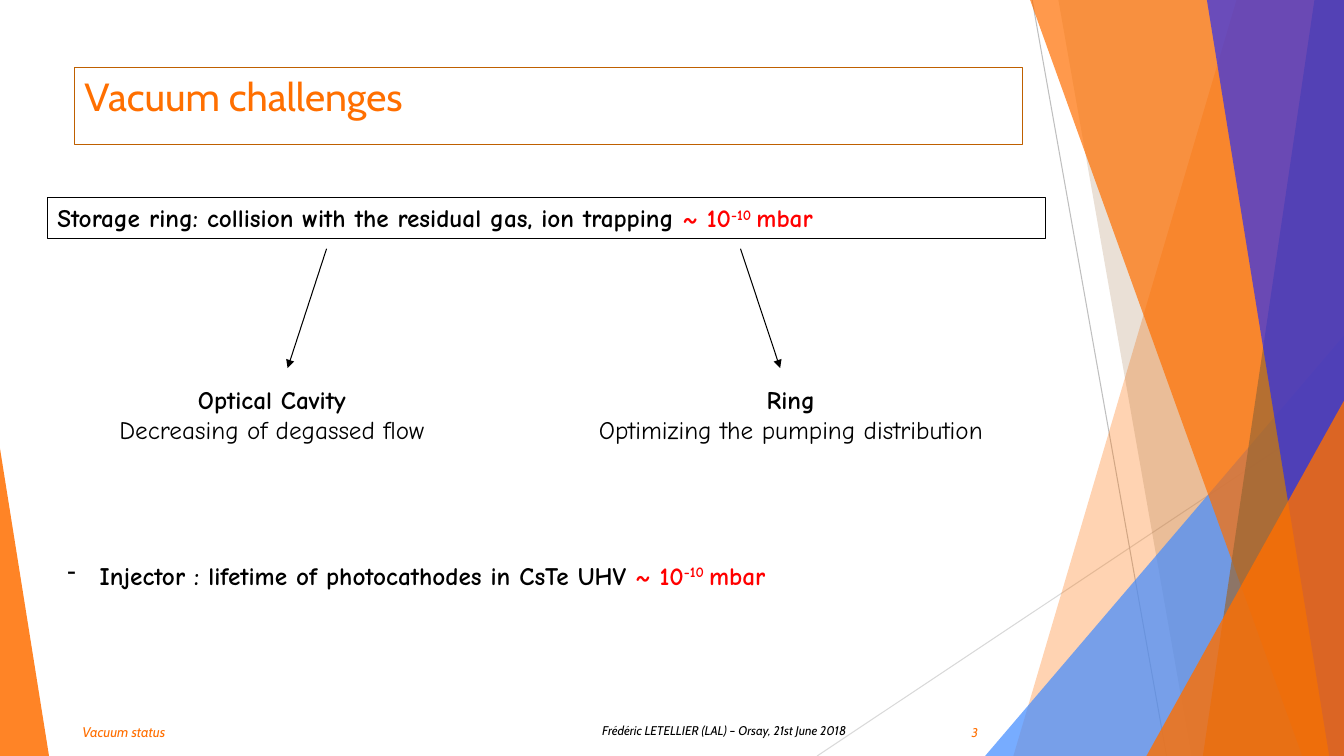
"""Build the slide on vacuum challenges in a storage ring and its injector."""
import pptx
import pptx.dml.color
import pptx.enum.shapes
import pptx.enum.text
import pptx.oxml
import pptx.oxml.ns
import pptx.util

WIDTH, HEIGHT = pptx.util.Inches(13.33), pptx.util.Inches(7.5)
ORANGE, BROWN, BLUE, INDIGO = "FF6F00", "996633", "438CFF", "1F29FD"
BLACK, RED, RUST = "000000", "FF0000", "BF6000"
LEFT, CENTER, RIGHT = (getattr(pptx.enum.text.PP_ALIGN, side) for side in ("LEFT", "CENTER", "RIGHT"))
TOP, MIDDLE = pptx.enum.text.MSO_ANCHOR.TOP, pptx.enum.text.MSO_ANCHOR.MIDDLE
TITLE = {"name": "Cabin", "size": pptx.util.Pt(28)}
BODY = {"name": "Comic Neue", "size": pptx.util.Pt(18), "bold": False}
STRONG = {**BODY, "bold": True}
SMALL = {"name": "Cabin", "size": pptx.util.Pt(9), "italic": True}
FOOTER = {**SMALL, "size": pptx.util.Pt(10)}
PRESSURE = [("~ 10", RED, 0), ("-10 ", RED, 30), ("mbar", RED, 0)]


def across(share):
    """Turn a percentage of the slide width into a length."""
    return pptx.util.Emu(round(WIDTH * share / 100))


def down(share):
    """Turn a percentage of the slide height into a length."""
    return pptx.util.Emu(round(HEIGHT * share / 100))


def paint(target, color):
    """Give a colour format the colour of a hex string."""
    target.rgb = pptx.dml.color.RGBColor.from_string(color)


def make(tag, **values):
    """Return a new drawing element with the given attributes."""
    element = pptx.oxml.parse_xml(f"<a:{tag} {pptx.oxml.ns.nsdecls('a')}/>")
    for key, value in values.items():
        element.set(key, str(value))
    return element


def add_facet(page, points, color, opacity):
    """Draw a translucent polygon through points given as slide shares."""
    start, *others = [(across(x), down(y)) for x, y in points]
    builder = page.shapes.build_freeform(*start)
    builder.add_line_segments(others, close=True)
    facet = builder.convert_to_shape()
    facet.shadow.inherit = False
    facet.line.fill.background()
    facet.fill.solid()
    paint(facet.fill.fore_color, color)
    tint = facet.fill._xPr.find(".//" + pptx.oxml.ns.qn("a:srgbClr"))
    tint.append(make("alpha", val=opacity * 1000))


def add_band(page, top, bottom, color, opacity):
    """Draw a facet from a slanted edge to the right side of the slide."""
    add_facet(page, [(top, 0), (bottom, 100), (100, 100), (100, 0)], color, opacity)


def add_line(page, start, end, color, arrow=False):
    """Draw a thin straight line, with an arrowhead at its end if asked."""
    line = page.shapes.add_connector(
        pptx.enum.shapes.MSO_CONNECTOR.STRAIGHT,
        across(start[0]), down(start[1]), across(end[0]), down(end[1]))
    line.line.width = pptx.util.Pt(0.75)
    paint(line.line.color, color)
    if arrow:
        line.line._get_or_add_ln().append(make("tailEnd", type="triangle"))
    line._element.spPr.append(make("effectLst"))


def add_text(page, place, lines, align=LEFT, anchor=TOP, border=None, bullet=None):
    """Write lines of (format, spans) in a box, framed if a border is given."""
    x, y, width, height = place
    area = across(x), down(y), across(width), down(height)
    if border:
        box = page.shapes.add_shape(pptx.enum.shapes.MSO_SHAPE.RECTANGLE, *area)
        box.shadow.inherit = False
        box.fill.background()
        box.line.width = pptx.util.Pt(0.75)
        paint(box.line.color, border)
    else:
        box = page.shapes.add_textbox(*area)
    frame = box.text_frame
    frame.word_wrap, frame.vertical_anchor = True, anchor
    for index, (style, spans) in enumerate(lines):
        para = frame.add_paragraph() if index else frame.paragraphs[0]
        para.alignment = align
        if bullet:
            indent = pptx.util.Inches(0.32)
            properties = para._p.get_or_add_pPr()
            properties.set("marL", str(indent))
            properties.set("indent", str(-indent))
            properties.append(make("buChar", char=bullet))
        for words, color, raised in spans:
            span = para.add_run()
            span.text = words
            for key, value in style.items():
                setattr(span.font, key, value)
            paint(span.font.color, color)
            if raised:
                span._r.get_or_add_rPr().set("baseline", str(raised * 1000))


def add_backdrop(page):
    """Draw the slanted lines and facets along the slide's edges."""
    add_line(page, (60.8, 100), (99.9, 53.7), "D9D9D9")
    add_line(page, (76.8, 0), (86.8, 100), "BFBFBF")
    add_band(page, 92, 75.4, ORANGE, 30)
    add_band(page, 78.75, 88.65, BROWN, 20)
    add_facet(page, [(73.3, 100), (100, 44.4), (100, 100)], BLUE, 72)
    add_band(page, 76.65, 96.9, ORANGE, 70)
    add_band(page, 97.8, 89.5, BROWN, 70)
    add_band(page, 89.8, 98.9, INDIGO, 65)
    add_facet(page, [(85.3, 100), (100, 53), (100, 100)], ORANGE, 80)
    add_facet(page, [(0, 59.3), (3.65, 100), (0, 100)], ORANGE, 85)


def add_goal(page, x, width, heading, detail):
    """Write a bold heading with its detail below, centred in a column."""
    lines = [(STRONG, [(heading, BLACK, 0)]), (BODY, [(detail, BLACK, 0)])]
    add_text(page, (x, 50.13, width, 9.47), lines, CENTER)


def main():
    """Build the deck and save it."""
    deck = pptx.Presentation()
    deck.slide_width, deck.slide_height = WIDTH, HEIGHT
    page = deck.slides.add_slide(deck.slide_layouts[6])
    add_backdrop(page)
    add_text(page, (5.55, 8.93, 70.5, 10.13),
             [(TITLE, [("Vacuum challenges", ORANGE, 0)])], border=RUST)
    storage = "Storage ring: collision with the residual gas, ion trapping "
    add_text(page, (3.53, 26.13, 74.25, 5.4),
             [(STRONG, [(storage, BLACK, 0), *PRESSURE])], border=BLACK)
    add_line(page, (24.3, 32.9), (21.4, 48.7), BLACK, arrow=True)
    add_line(page, (55.1, 32.9), (58.05, 48.7), BLACK, arrow=True)
    add_goal(page, 5.93, 28.58, "Optical Cavity", "Decreasing of degassed flow")
    add_goal(page, 42, 33.68, "Ring", "Optimizing the pumping distribution")
    injector = "Injector : lifetime of photocathodes in CsTe UHV "
    add_text(page, (4.28, 73.4, 80.33, 5.4),
             [(STRONG, [(injector, BLACK, 0), *PRESSURE])], bullet="-")
    add_text(page, (5.4, 95.07, 21.75, 3.6), [(FOOTER, [("Vacuum status", ORANGE, 0)])])
    add_text(page, (35.1, 94.93, 28.58, 3.33),
             [(SMALL, [("Frédéric LETELLIER (LAL) – Orsay, 21st June 2018", BLACK, 0)])], RIGHT)
    add_text(page, (68.93, 94.67, 4.58, 4.53), [(SMALL, [("3", ORANGE, 0)])], RIGHT, MIDDLE)
    deck.save("out.pptx")


if __name__ == "__main__":
    main()
